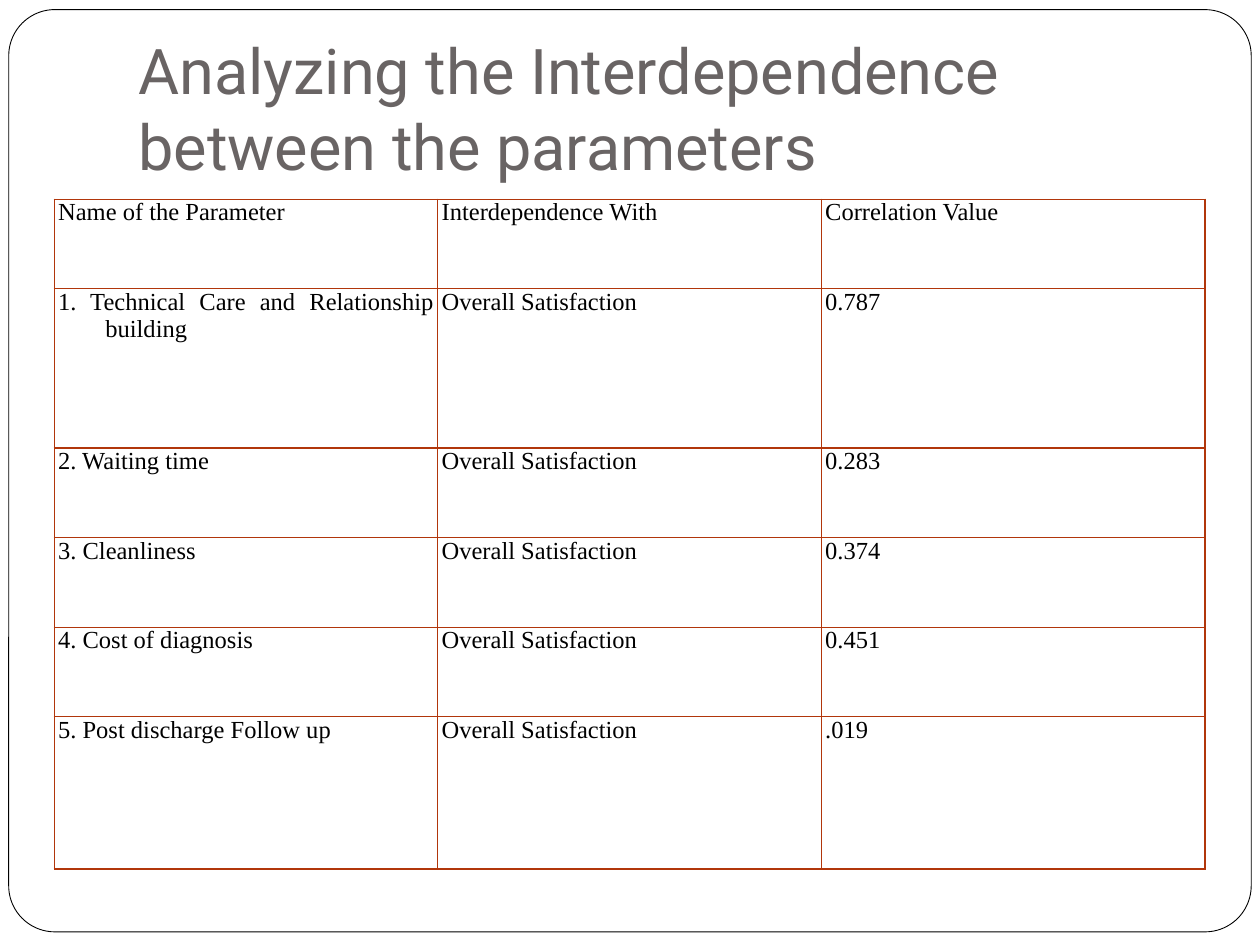
from lxml import etree
from pptx import Presentation
from pptx import util as u
from pptx.dml import color
from pptx.enum import shapes, text
from pptx.oxml import ns

COLOURS = {
    "paper": "FFFFFF",
    "frame": "000000",
    "title": "696464",
    "body": "000000",
    "border": "B1360B",
}
TITLE = "Analyzing the Interdependence between the parameters"
HEADINGS = ("Name of the Parameter", "Interdependence With", "Correlation Value")
CORRELATIONS = (
    ("1. Technical Care and Relationship building", "0.787"),
    ("2. Waiting time", "0.283"),
    ("3. Cleanliness", "0.374"),
    ("4. Cost of diagnosis", "0.451"),
    ("5. Post discharge Follow up", ".019"),
)
ROW_HEIGHTS = (51.2, 91, 51.2, 51.2, 51.2, 87)
COLUMN_WIDTH = 219.2
HANGING_INDENT = 27


def rgb(name):
    return color.RGBColor.from_string(COLOURS[name])


def add_span(para, words, size, font, colour):
    span = para.add_run()
    span.text = words
    span.font.size = u.Pt(size)
    span.font.name = font
    span.font.color.rgb = rgb(colour)


def add_frame(page):
    frame = page.shapes.add_shape(
        shapes.MSO_SHAPE.ROUNDED_RECTANGLE, u.Pt(5), u.Pt(5.5), u.Pt(710), u.Pt(527)
    )
    frame.adjustments[0] = 0.05
    frame.shadow.inherit = False
    frame.fill.solid()
    frame.fill.fore_color.rgb = rgb("paper")
    frame.line.color.rgb = rgb("frame")
    frame.line.width = u.Pt(0.5)


def add_title(page):
    box = page.shapes.add_textbox(u.Pt(72), u.Pt(21.6), u.Pt(612), u.Pt(90))
    frame = box.text_frame
    frame.word_wrap = True
    frame.vertical_anchor = text.MSO_ANCHOR.BOTTOM
    frame.margin_bottom = u.Pt(7.2)
    add_span(frame.paragraphs[0], TITLE, 36, "Roboto", "title")


def add_borders(cell):
    properties = cell._tc.get_or_add_tcPr()
    for side in ("a:lnL", "a:lnR", "a:lnT", "a:lnB"):
        line = etree.SubElement(properties, ns.qn(side), w=str(u.Pt(0.75)))
        fill = etree.SubElement(line, ns.qn("a:solidFill"))
        etree.SubElement(fill, ns.qn("a:srgbClr"), val=COLOURS["border"])


def fill_cell(cell, words, hanging):
    add_borders(cell)
    cell.fill.background()
    cell.margin_left = cell.margin_right = u.Pt(2.2)
    cell.margin_top = cell.margin_bottom = u.Pt(0)
    para = cell.text_frame.paragraphs[0]
    para.alignment = text.PP_ALIGN.JUSTIFY
    if hanging:
        properties = para._p.get_or_add_pPr()
        properties.set("marL", str(u.Pt(HANGING_INDENT)))
        properties.set("indent", str(-u.Pt(HANGING_INDENT)))
    add_span(para, words, 14, "Times New Roman", "body")


def add_correlation_table(page):
    rows = [HEADINGS]
    rows += [(name, "Overall Satisfaction", value) for name, value in CORRELATIONS]
    table = page.shapes.add_table(
        len(rows), len(HEADINGS), u.Pt(31), u.Pt(113.8),
        u.Pt(COLUMN_WIDTH * len(HEADINGS)), u.Pt(sum(ROW_HEIGHTS)),
    ).table
    table.first_row = False
    table.horz_banding = False
    for column in table.columns:
        column.width = u.Pt(COLUMN_WIDTH)
    for row_index, (row, height) in enumerate(zip(rows, ROW_HEIGHTS)):
        table.rows[row_index].height = u.Pt(height)
        for column_index, words in enumerate(row):
            hanging = row_index > 0 and column_index == 0
            fill_cell(table.cell(row_index, column_index), words, hanging)


def main():
    deck = Presentation()
    deck.slide_width = u.Pt(720)
    deck.slide_height = u.Pt(540)
    page = deck.slides.add_slide(deck.slide_layouts[6])
    add_frame(page)
    add_title(page)
    add_correlation_table(page)
    deck.save("out.pptx")


if __name__ == "__main__":
    main()
